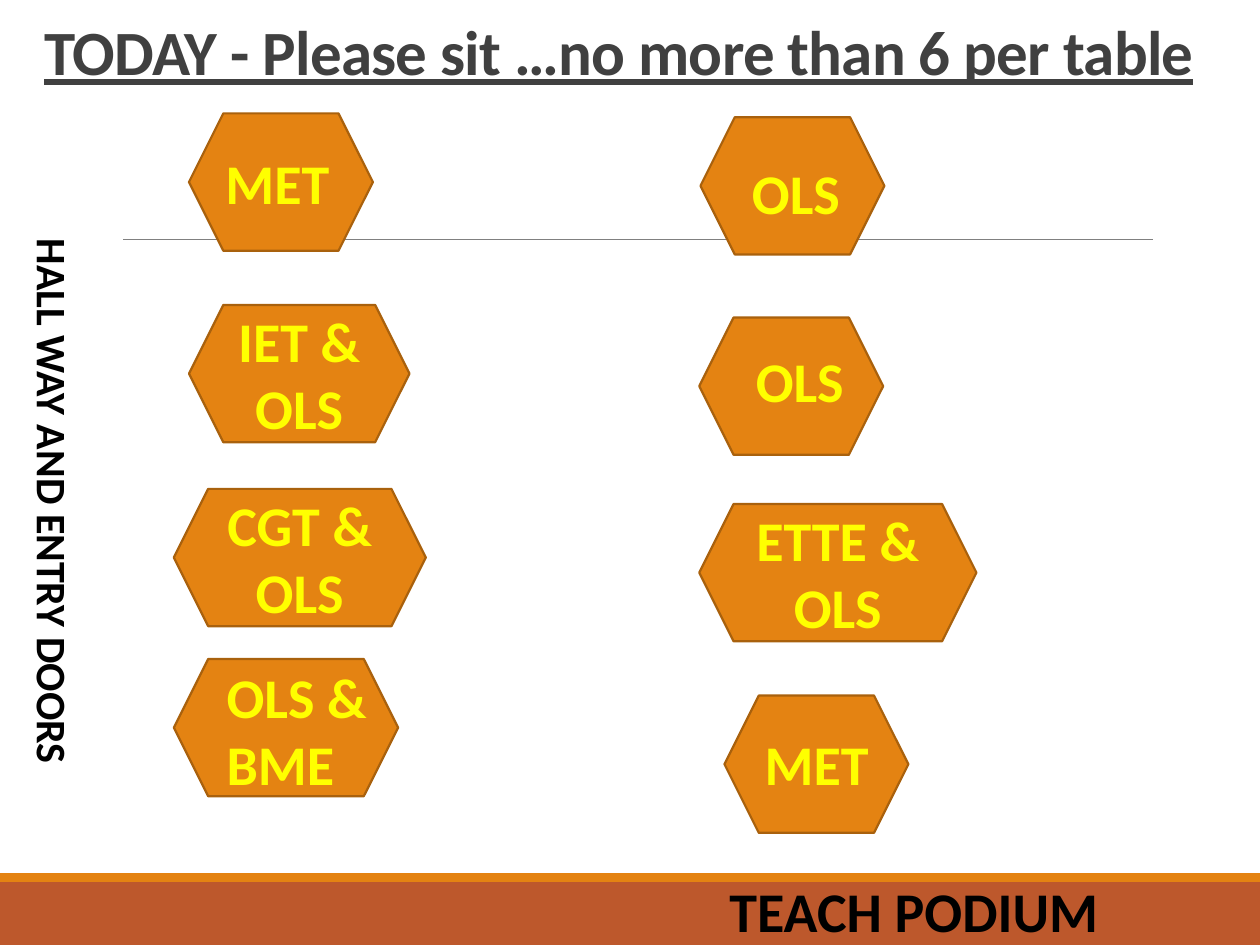
from pptx import Presentation
from pptx.dml.color import RGBColor
from pptx.enum.shapes import MSO_CONNECTOR, MSO_SHAPE
from pptx.enum.text import MSO_ANCHOR, PP_ALIGN
from pptx.oxml.ns import qn
from pptx.util import Inches, Pt

ORANGE = RGBColor(0xE4, 0x83, 0x12)
RUST = RGBColor(0xBD, 0x58, 0x2C)
BROWN = RGBColor(0xA9, 0x61, 0x0D)
YELLOW = RGBColor(0xFF, 0xFF, 0x00)
DARK = RGBColor(0x40, 0x40, 0x40)
GRAY = RGBColor(0x80, 0x80, 0x80)
BLACK = RGBColor(0, 0, 0)

TABLE_H = 1.09
SINGLE_W = 1.46
LABEL_W, LABEL_H = 1.16, 0.64

prs = Presentation()
prs.slide_width, prs.slide_height = Inches(10), Inches(7.5)
s = prs.slides.add_slide(prs.slide_layouts[5])


def add_filled(kind, x, y, w, h, color):
    sp = s.shapes.add_shape(kind, Inches(x), Inches(y), Inches(w), Inches(h))
    sp.shadow.inherit = False
    sp.fill.solid()
    sp.fill.fore_color.rgb = color
    sp.line.fill.background()
    return sp


def write(sp, lines, size, color, align=PP_ALIGN.LEFT):
    """Fill a shape with bold Calibri, one paragraph per line."""
    tf = sp.text_frame
    tf.word_wrap = True
    tf.text = "\n".join(lines)
    for p in tf.paragraphs:
        p.alignment = align
        p.font.name = "Calibri"
        p.font.size = Pt(size)
        p.font.bold = True
        p.font.color.rgb = color


# Footer bands and rule
add_filled(MSO_SHAPE.RECTANGLE, 0, 7, 10, 0.5, RUST)
add_filled(MSO_SHAPE.RECTANGLE, 0, 6.93, 10, 0.07, ORANGE)
rule = s.shapes.add_connector(MSO_CONNECTOR.STRAIGHT, Inches(0.98), Inches(1.9),
                              Inches(9.15), Inches(1.9))
rule.line.color.rgb = GRAY
rule.line.width = Pt(0.5)
rule._element.spPr.append(rule._element.makeelement(qn("a:effectLst"), {}))

# Title
title = s.shapes.title
title.left, title.top = Inches(0.25), Inches(0.17)
title.width, title.height = Inches(9.55), Inches(0.58)
write(title, ["TODAY - Please sit …no more than 6 per table"], 36, DARK)
title.text_frame.vertical_anchor = MSO_ANCHOR.BOTTOM
p = title.text_frame.paragraphs[0]
p.line_spacing = 0.85
p.font.underline = True
p.runs[0].font._element.set("spc", "-40")

# Tables: left, top, width, lines written inside
tables = [
    (1.5, 0.9, SINGLE_W, []),
    (1.5, 2.42, 1.75, ["IET &", "OLS"]),
    (1.38, 3.88, 2, ["CGT &", "OLS"]),
    (1.38, 5.23, 1.78, []),
    (5.56, 0.93, SINGLE_W, []),
    (5.55, 2.52, SINGLE_W, []),
    (5.55, 4, 2.2, ["ETTE &", "OLS"]),
    (5.75, 5.52, SINGLE_W, []),
]
for x, y, w, lines in tables:
    sp = add_filled(MSO_SHAPE.HEXAGON, x, y, w, TABLE_H, ORANGE)
    sp.line.color.rgb = BROWN
    sp.line.width = Pt(1.25)
    if lines:
        write(sp, lines, 32, YELLOW, PP_ALIGN.CENTER)
        sp.text_frame.vertical_anchor = MSO_ANCHOR.MIDDLE

# Labels: text, left, top, width, height, size, colour, rotation
labels = [
    ("MET", 1.69, 1.13, LABEL_W, LABEL_H, 32, YELLOW, 0),
    ("OLS & BME", 1.7, 5.21, 1.46, 1.18, 32, YELLOW, 0),
    ("OLS", 5.87, 1.21, LABEL_W, LABEL_H, 32, YELLOW, 0),
    ("OLS", 5.9, 2.7, LABEL_W, LABEL_H, 32, YELLOW, 0),
    ("MET", 5.97, 5.74, LABEL_W, LABEL_H, 32, YELLOW, 0),
    ("TEACH PODIUM", 5.69, 6.91, 3.4, LABEL_H, 32, BLACK, 0),
    ("HALL WAY AND ENTRY DOORS", -1.8, 3.76, 4.44, 0.51, 24, BLACK, 90),
]
for text, x, y, w, h, size, color, rotation in labels:
    box = s.shapes.add_textbox(Inches(x), Inches(y), Inches(w), Inches(h))
    box.rotation = rotation
    write(box, [text], size, color)

prs.save("out.pptx")
